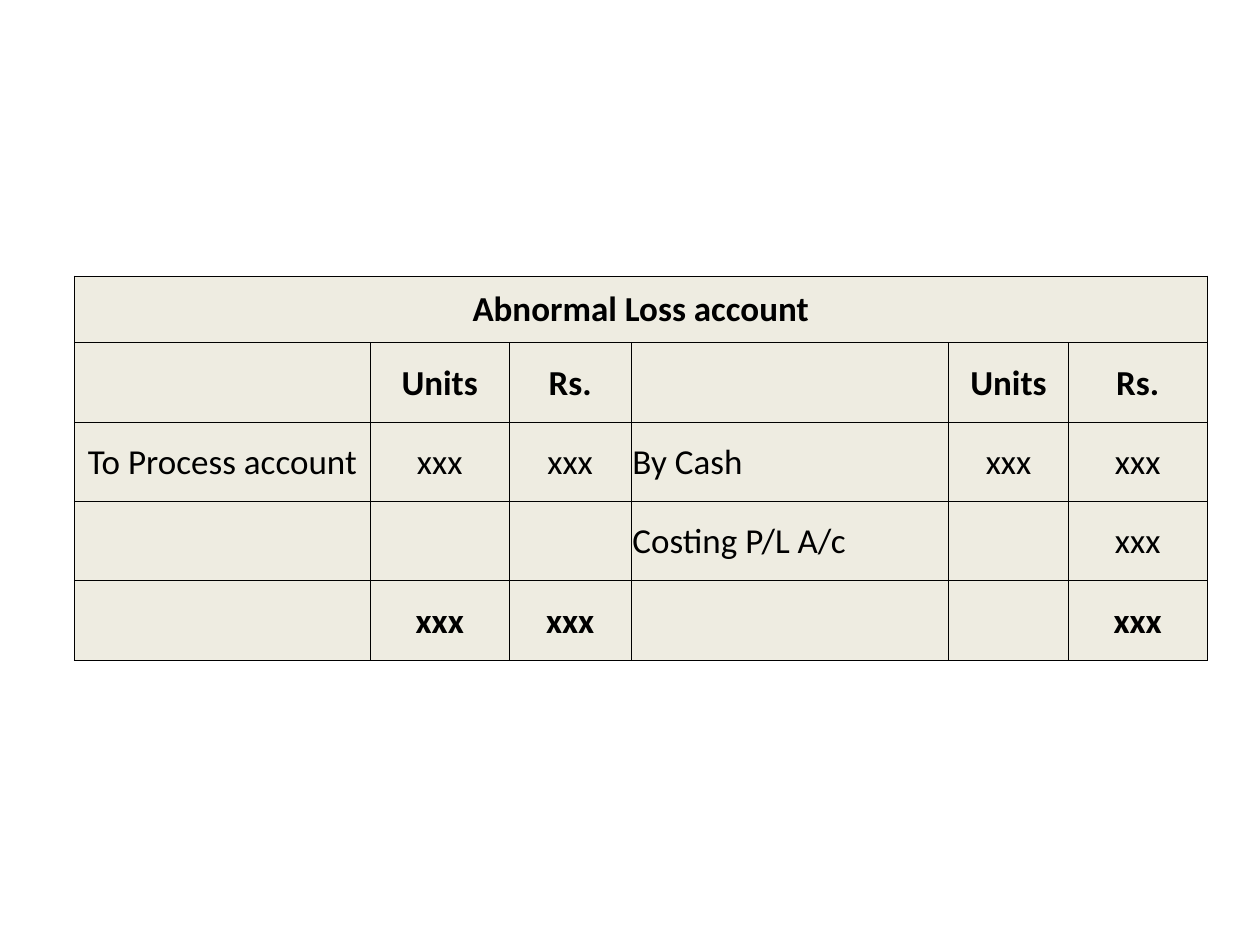
import dataclasses

import lxml.etree
import pptx
import pptx.dml.color
import pptx.enum.text
import pptx.oxml.ns
import pptx.util

COLORS = {"paper": "EEECE1", "ink": "000000"}
FONT = "Calibri"
SLIDE_WIDTH, SLIDE_HEIGHT = 10, 7.5
LEFT, TOP = 0.59, 2.19
COLUMN_WIDTHS = [2.35, 1.1, 0.97, 2.52, 0.95, 1.1]
TITLE_HEIGHT, ENTRY_HEIGHT = 0.53, 0.63
CREDIT_COLUMN = 3


@dataclasses.dataclass
class LedgerRow:
    entries: list[str]
    bold: bool = False


LEDGER = [
    LedgerRow(["Abnormal Loss account", "", "", "", "", ""], bold=True),
    LedgerRow(["", "Units", "Rs.", "", "Units", "Rs."], bold=True),
    LedgerRow(["To Process account", "xxx", "xxx", "By Cash", "xxx", "xxx"]),
    LedgerRow(["", "", "", "Costing P/L A/c", "", "xxx"]),
    LedgerRow(["", "xxx", "xxx", "", "", "xxx"], bold=True),
]


def write_text(cell, text: str, *, bold: bool = False, centered: bool = True,
               size: float = 20, color: str = "ink") -> None:
    align = pptx.enum.text.PP_ALIGN
    paragraph = cell.text_frame.paragraphs[0]
    paragraph.alignment = align.CENTER if centered else align.LEFT
    run = paragraph.add_run()
    run.text = text
    run.font.name = FONT
    run.font.size = pptx.util.Pt(size)
    run.font.bold = bold
    run.font.color.rgb = pptx.dml.color.RGBColor.from_string(COLORS[color])


def style_cell(cell) -> None:
    """Set thin borders, paper fill, tight margins and middle anchoring."""
    cell.margin_left = cell.margin_right = cell.margin_top = pptx.util.Inches(0.01)
    cell.margin_bottom = 0
    cell.vertical_anchor = pptx.enum.text.MSO_ANCHOR.MIDDLE
    qn = pptx.oxml.ns.qn
    properties = cell._tc.get_or_add_tcPr()
    for side in ("lnL", "lnR", "lnT", "lnB"):
        border = lxml.etree.SubElement(properties, qn(f"a:{side}"), w=str(pptx.util.Pt(0.5)))
        line_fill = lxml.etree.SubElement(border, qn("a:solidFill"))
        lxml.etree.SubElement(line_fill, qn("a:srgbClr"), val=COLORS["ink"])
    cell.fill.solid()
    cell.fill.fore_color.rgb = pptx.dml.color.RGBColor.from_string(COLORS["paper"])


def add_ledger(slide, rows: list[LedgerRow]) -> None:
    heights = [TITLE_HEIGHT] + [ENTRY_HEIGHT] * (len(rows) - 1)
    bounds = map(pptx.util.Inches, (LEFT, TOP, sum(COLUMN_WIDTHS), sum(heights)))
    ledger = slide.shapes.add_table(len(rows), len(COLUMN_WIDTHS), *bounds).table
    ledger.first_row = ledger.horz_banding = False
    for column, width in zip(ledger.columns, COLUMN_WIDTHS):
        column.width = pptx.util.Inches(width)
    for table_row, height, row in zip(ledger.rows, heights, rows):
        table_row.height = pptx.util.Inches(height)
        for index, (cell, entry) in enumerate(zip(table_row.cells, row.entries)):
            style_cell(cell)
            if entry:
                write_text(cell, entry, bold=row.bold, centered=index != CREDIT_COLUMN)
    ledger.cell(0, 0).merge(ledger.cell(0, len(COLUMN_WIDTHS) - 1))


def main() -> None:
    deck = pptx.Presentation()
    deck.slide_width = pptx.util.Inches(SLIDE_WIDTH)
    deck.slide_height = pptx.util.Inches(SLIDE_HEIGHT)
    blank_layout = deck.slide_layouts.get_by_name("Blank")
    add_ledger(deck.slides.add_slide(blank_layout), LEDGER)
    deck.save("out.pptx")


if __name__ == "__main__":
    main()
